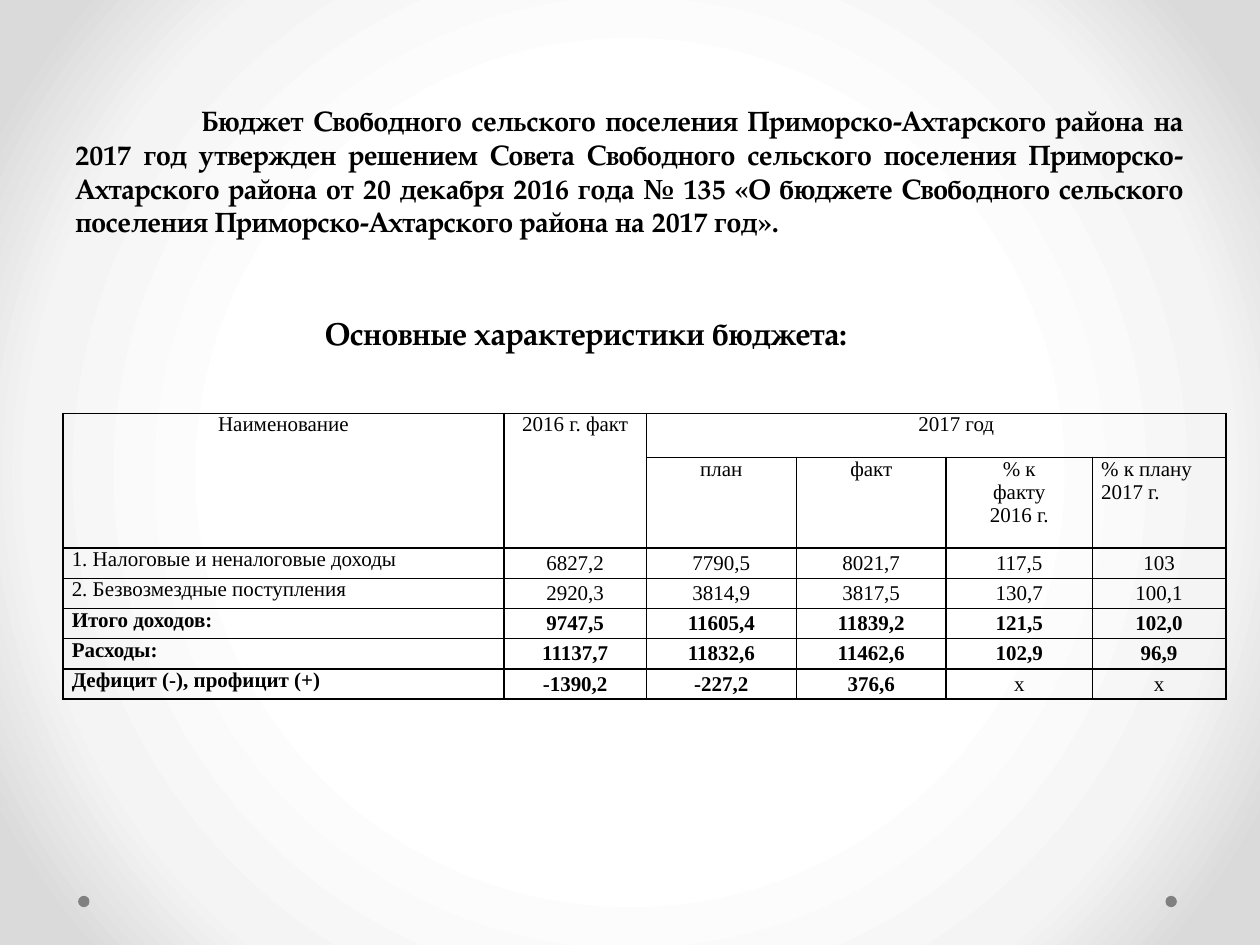
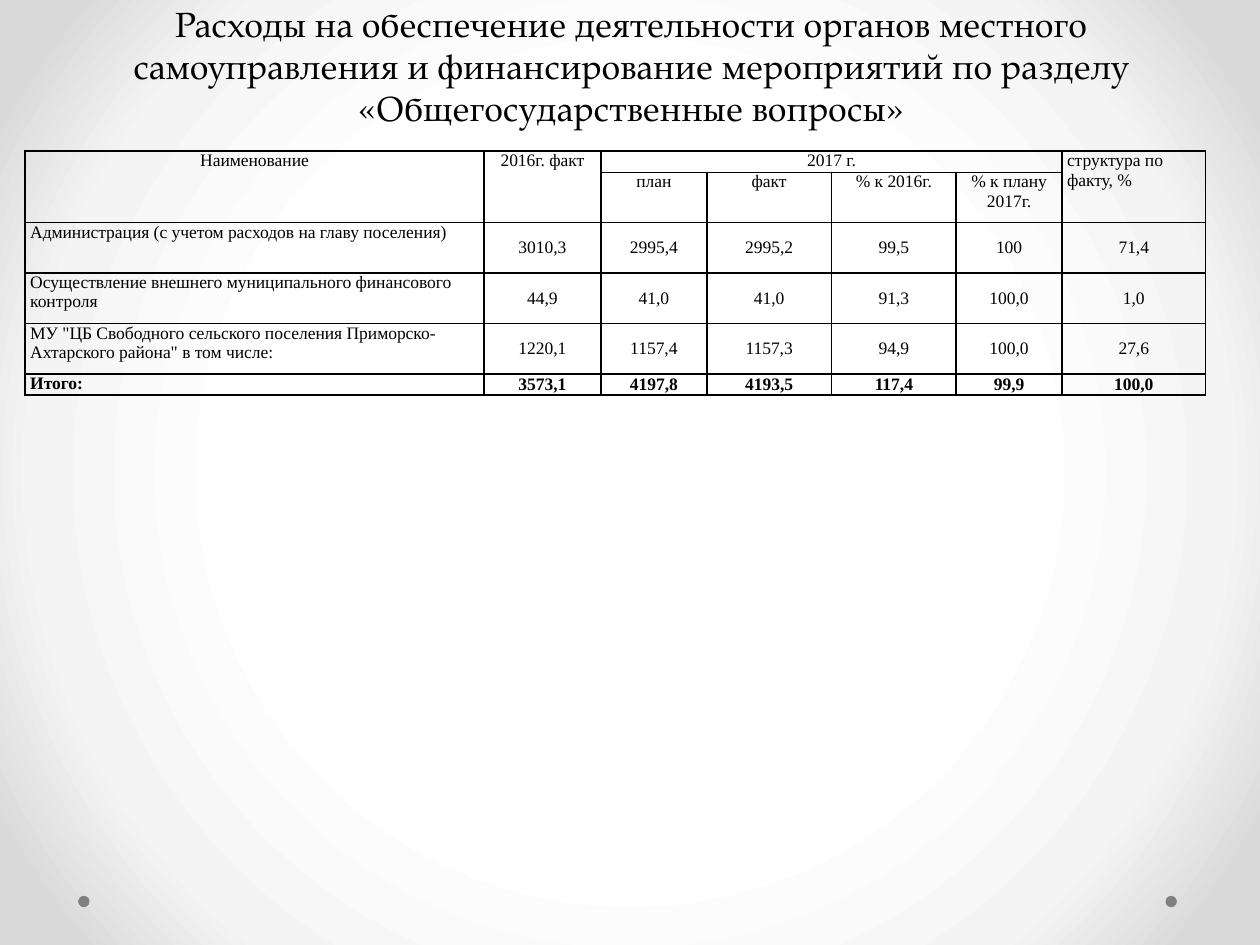
"""Builds two slides on the 2017 budget of a rural settlement."""
from lxml import etree
from pptx import Presentation
from pptx import util as u
from pptx.dml import color
from pptx.enum import shapes, text
from pptx.oxml import ns

LEFT, MID, JUST = text.PP_ALIGN.LEFT, text.PP_ALIGN.CENTER, text.PP_ALIGN.JUSTIFY
TOP, CENTRE, LOW = text.MSO_ANCHOR.TOP, text.MSO_ANCHOR.MIDDLE, text.MSO_ANCHOR.BOTTOM
BLACK, GREY = "000000", "808080"
SERIF, TIMES = "TeX Gyre Pagella", "Times New Roman"
STOPS = ((50, "FFFFFF"), (76, "F4F4F4"), (92, "DADADA"))


def rgb(code):
    return color.RGBColor.from_string(code)


def node(parent, tag, **attrs):
    return etree.SubElement(parent, ns.qn(tag), {k: str(v) for k, v in attrs.items()})


def write(frame, words, size=12, font=SERIF, bold=False, align=LEFT, first=0, left=0):
    for i, line in enumerate(words.split("\n")):
        para = frame.add_paragraph() if i else frame.paragraphs[0]
        para.alignment = align
        props = para._p.get_or_add_pPr()
        props.set("marL", str(u.Inches(left)))
        props.set("indent", str(u.Inches(first)))
        run = para.add_run()
        run.text = line
        run.font.size, run.font.name, run.font.bold = u.Pt(size), font, bold
        run.font.color.rgb = rgb(BLACK)


class Deck:
    def __init__(self):
        self.prs = Presentation()
        self.prs.slide_width, self.prs.slide_height = u.Inches(10), u.Inches(7.5)
        self.glow()

    def glow(self):
        master = self.prs.slide_master
        master.background.fill.solid()
        back = master.element.find(".//" + ns.qn("p:bgPr"))
        back.remove(back[0])
        grad = node(back, "a:gradFill", rotWithShape=1)
        back.insert(0, grad)
        stops = node(grad, "a:gsLst")
        for pos, code in STOPS:
            node(node(stops, "a:gs", pos=pos * 1000), "a:srgbClr", val=code)
        focus = node(grad, "a:path", path="circle")
        node(focus, "a:fillToRect", **dict.fromkeys("ltrb", 50000))

    def page(self):
        self.slide = self.prs.slides.add_slide(self.prs.slide_layouts[6])
        for x in (9.25, 0.62):
            self.dot(x, 7.11, 0.09)

    def dot(self, x, y, size):
        dot = self.slide.shapes.add_shape(
            shapes.MSO_SHAPE.OVAL, *map(u.Inches, (x, y, size, size)))
        dot.shadow.inherit = False
        dot.fill.solid()
        dot.fill.fore_color.rgb = rgb(GREY)
        dot.line.fill.background()

    def label(self, box, words, anchor=TOP, wrap=True, **style):
        frame = self.slide.shapes.add_textbox(*map(u.Inches, box)).text_frame
        frame.word_wrap, frame.vertical_anchor = wrap, anchor
        write(frame, words, **style)

    def grid(self, x, y, cols, rows, data, spans, pad, size, bold, lefts, shift=0):
        box = map(u.Inches, (x, y, sum(cols), sum(rows)))
        table = self.slide.shapes.add_table(len(rows), len(cols), *box).table
        table.first_row = table.horz_banding = False
        for col, width in zip(table.columns, cols):
            col.width = u.Inches(width)
        for row, height in zip(table.rows, rows):
            row.height = u.Inches(height)
        for r, line in enumerate(data):
            for c, words in enumerate(line):
                cell = table.cell(r, c)
                body = r > 1
                cell.margin_left = cell.margin_right = u.Inches(pad)
                cell.margin_top = cell.margin_bottom = 0
                cell.vertical_anchor = CENTRE if body and c else TOP
                flush = words in lefts or body and not c
                write(cell.text_frame, words, size=size, font=TIMES,
                      bold=r >= bold and words != "х",
                      align=LEFT if flush else MID,
                      left=shift if (r, c) == (0, 2) else 0)
                self.edge(cell)
        for top, left, low, right in spans:
            table.cell(top, left).merge(table.cell(low, right))

    def edge(self, cell):
        props = cell._tc.get_or_add_tcPr()
        for side in "LRTB":
            line = node(props, "a:ln" + side, w=u.Pt(1))
            node(node(line, "a:solidFill"), "a:srgbClr", val=BLACK)
        cell.fill.background()


def totals(deck):
    deck.page()
    deck.label(
        (0.5, 0, 9, 1.94),
        "Бюджет Свободного сельского поселения Приморско-Ахтарского района на 2017 год "
        "утвержден решением Совета Свободного сельского поселения Приморско-Ахтарского "
        "района от 20 декабря 2016 года № 135 «О бюджете Свободного сельского поселения "
        "Приморско-Ахтарского района на 2017 год».",
        anchor=LOW, size=16, bold=True, align=JUST, first=1)
    deck.label((2.48, 2.44, 4.89, 0.4), "Основные характеристики бюджета:",
               wrap=False, size=18, bold=True)
    plan = "% к плану\n2017 г."
    data = [
        ["Наименование", "2016 г. факт", "2017 год", "", "", ""],
        ["", "", "план", "факт", "% к\nфакту\n2016 г.", plan],
        ["1. Налоговые и неналоговые доходы", "6827,2", "7790,5", "8021,7", "117,5", "103"],
        ["2. Безвозмездные поступления", "2920,3", "3814,9", "3817,5", "130,7", "100,1"],
        ["Итого доходов:", "9747,5", "11605,4", "11839,2", "121,5", "102,0"],
        ["Расходы:", "11137,7", "11832,6", "11462,6", "102,9", "96,9"],
        ["Дефицит (-), профицит (+)", "-1390,2", "-227,2", "376,6", "х", "х"],
    ]
    deck.grid(0.5, 3.28, [3.5, 1.13, 1.19, 1.19, 1.16, 1.06], [0.35, 0.72] + [0.24] * 5,
              data, [(0, 0, 1, 0), (0, 1, 1, 1), (0, 2, 0, 5)],
              pad=0.07, size=12, bold=4, lefts=[plan], shift=0.32)


def costs(deck):
    deck.page()
    deck.label(
        (0.51, 0.01, 9, 1.06),
        "Расходы на обеспечение деятельности органов местного самоуправления и "
        "финансирование мероприятий по разделу «Общегосударственные вопросы»",
        anchor=LOW, size=20, align=MID)
    share = "структура по факту, %"
    data = [
        ["Наименование", "2016г. факт", "2017 г.", "", "", "", share],
        ["", "", "план", "факт", "% к 2016г.", "% к плану 2017г.", ""],
        ["Администрация (с учетом расходов на главу поселения)",
         "3010,3", "2995,4", "2995,2", "99,5", "100", "71,4"],
        ["Осуществление внешнего муниципального финансового контроля",
         "44,9", "41,0", "41,0", "91,3", "100,0", "1,0"],
        ["МУ \"ЦБ Свободного сельского поселения Приморско-Ахтарского района\" в том числе:",
         "1220,1", "1157,4", "1157,3", "94,9", "100,0", "27,6"],
        ["Итого:", "3573,1", "4197,8", "4193,5", "117,4", "99,9", "100,0"],
    ]
    deck.grid(0.2, 1.2, [3.64, 0.93, 0.84, 0.99, 0.99, 0.84, 1.14],
              [0.14] + [0.4] * 4 + [0.14],
              data, [(0, 0, 1, 0), (0, 1, 1, 1), (0, 2, 0, 5), (0, 6, 1, 6)],
              pad=0.04, size=10, bold=5, lefts=[share])


def main():
    deck = Deck()
    totals(deck)
    costs(deck)
    deck.prs.save("out.pptx")


if __name__ == "__main__":
    main()
